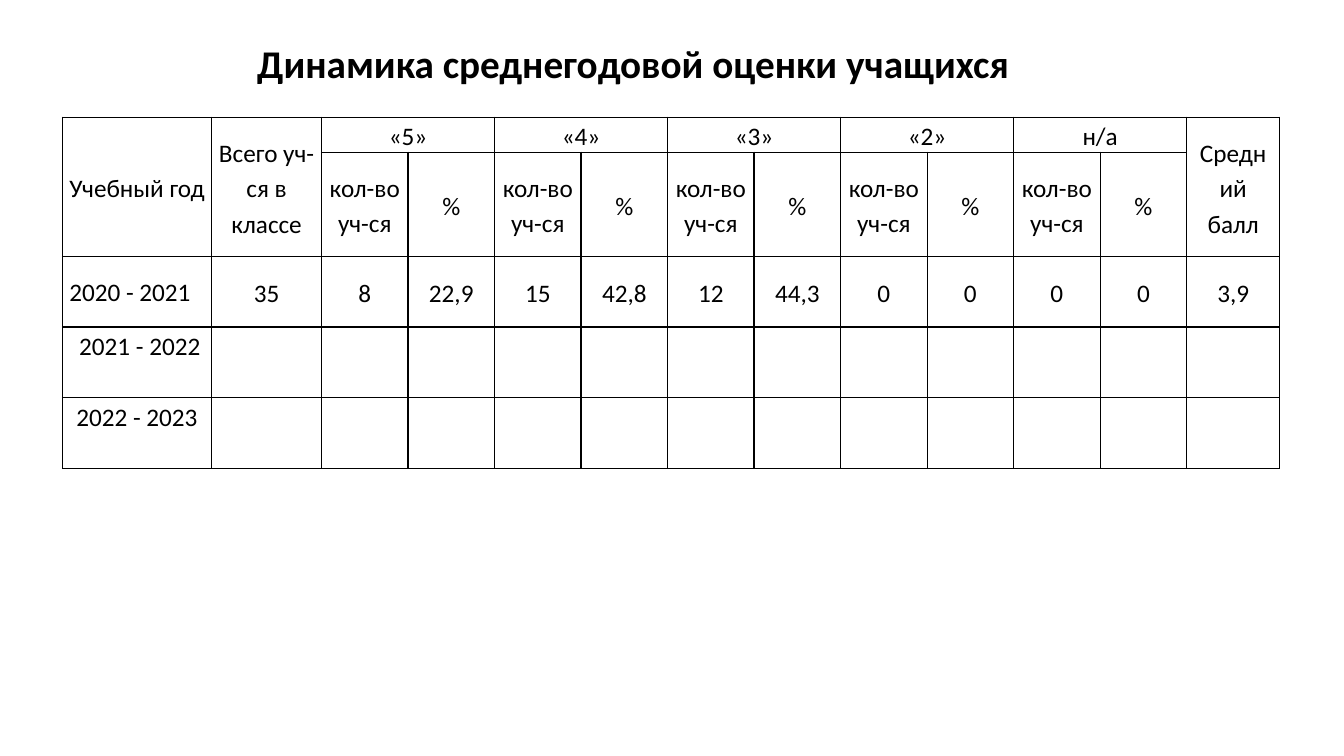
import pptx
import pptx.util
import pptx.oxml
import pptx.oxml.ns
import pptx.dml.color
import pptx.enum.text

Pt = pptx.util.Pt
Align = pptx.enum.text.PP_ALIGN
Anchor = pptx.enum.text.MSO_ANCHOR
colors = {"ink": "000000"}
ink = pptx.dml.color.RGBColor.from_string(colors["ink"])


def style(para, size, bold, align):
    para.alignment = align
    for run in para.runs:
        run.font.name = "Calibri"
        run.font.size = Pt(size)
        run.font.bold = bold
        run.font.color.rgb = ink


def frame(cell):
    props = cell._tc.get_or_add_tcPr()
    for side in "LRTB":
        props.append(pptx.oxml.parse_xml(
            f'<a:ln{side} {pptx.oxml.ns.nsdecls("a")} w="12700"><a:solidFill>'
            f'<a:srgbClr val="{colors["ink"]}"/></a:solidFill></a:ln{side}>'))
    cell.fill.background()


deck = pptx.Presentation()
deck.slide_width, deck.slide_height = Pt(960), Pt(540)
slide = deck.slides.add_slide(deck.slide_layouts[5])

title = slide.shapes.title
title.left, title.top, title.width, title.height = Pt(104.4), Pt(24.5), Pt(695.5), Pt(41)
title.text_frame.text = "Динамика среднегодовой оценки учащихся"
title.text_frame.word_wrap = True
title.text_frame.auto_size = pptx.enum.text.MSO_AUTO_SIZE.SHAPE_TO_FIT_TEXT
title.text_frame.vertical_anchor = Anchor.MIDDLE
style(title.text_frame.paragraphs[0], 28, True, Align.CENTER)

marks = ["«5»", "«4»", "«3»", "«2»", "н/а"]
top = ["Учебный год", "Всего уч-ся в классе"]
for mark in marks:
    top += [mark, ""]
rows = [
    top + ["Средний балл"],
    ["", ""] + ["кол-во уч-ся", "%"] * len(marks) + [""],
    ["2020 - 2021", "35", "8", "22,9", "15", "42,8", "12", "44,3",
     "0", "0", "0", "0", "3,9"],
    [" 2021 - 2022"] + [""] * 12,
    ["2022 - 2023"] + [""] * 12,
]
widths = [106.6, 78.5] + [61.8] * 10 + [66.5]
heights = [22.3, 57.6, 50.4, 50.4, 50.4]

holder = slide.shapes.add_table(len(rows), len(widths), Pt(44.6), Pt(83.8),
                                Pt(sum(widths)), Pt(sum(heights)))
table = holder.table
table.first_row = table.horz_banding = False
for col, width in zip(table.columns, widths):
    col.width = Pt(width)
for row, height in zip(table.rows, heights):
    row.height = Pt(height)

for c in (0, 1, 12):
    table.cell(0, c).merge(table.cell(1, c))
for c in range(2, 12, 2):
    table.cell(0, c).merge(table.cell(0, c + 1))

for r, row in enumerate(rows):
    for c, text in enumerate(row):
        cell = table.cell(r, c)
        cell.margin_left = cell.margin_right = Pt(5)
        cell.margin_top = cell.margin_bottom = Pt(0)
        frame(cell)
        high = r > 2 or (r == 0 and text in marks)
        cell.vertical_anchor = Anchor.TOP if high else Anchor.MIDDLE
        if text:
            cell.text_frame.text = text
            para = cell.text_frame.paragraphs[0]
            first = r == 2 and c == 0
            para.line_spacing = 1.07 if first else 1.15
            style(para, 18, False, Align.JUSTIFY if first else Align.CENTER)

deck.save("out.pptx")
